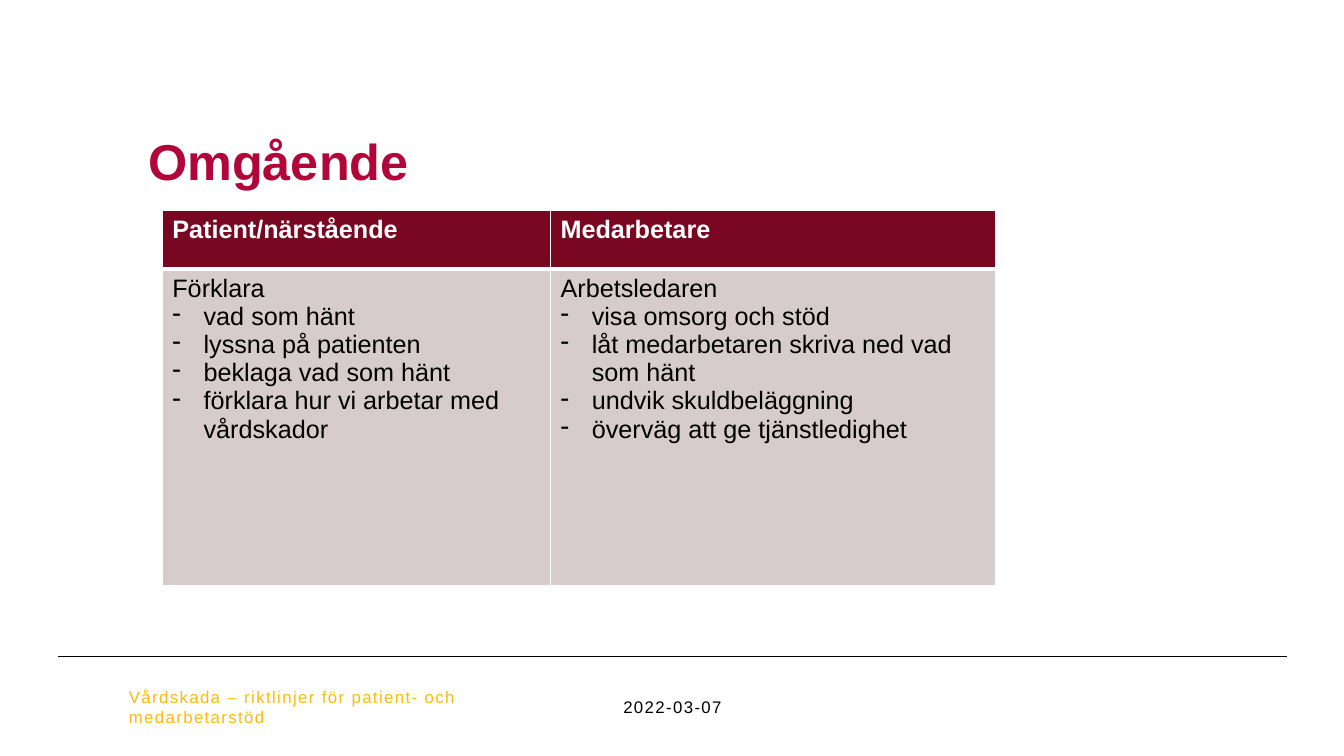
from pptx import Presentation
from pptx.dml.color import RGBColor
from pptx.enum.shapes import MSO_CONNECTOR
from pptx.enum.text import MSO_ANCHOR, PP_ALIGN
from pptx.oxml.ns import qn
from pptx.util import Inches, Pt
from lxml.etree import SubElement

COLORS = {"title": "B1063A", "header": "790721", "body": "D7CCCD",
          "white": "FFFFFF", "black": "000000", "footer": "FDB913"}

TITLE = "Omgående"
COLUMNS = [
    {"header": "Patient/närstående", "width": 3.85, "lead": "Förklara",
     "items": ["vad som hänt", "lyssna på patienten", "beklaga vad som hänt",
               "förklara hur vi arbetar med vårdskador"]},
    {"header": "Medarbetare", "width": 4.41, "lead": "Arbetsledaren",
     "items": ["visa omsorg och stöd", "låt medarbetaren skriva ned vad som hänt",
               "undvik skuldbeläggning", "överväg att ge tjänstledighet"]},
]
ROW_HEIGHTS = [0.58, 3.14]
FOOTERS = [  # text, left, width, alignment, colour
    ("2022-03-07", 5.31, 2.72, PP_ALIGN.CENTER, "black"),
    ("Vårdskada – riktlinjer för patient- och medarbetarstöd", 1.18, 3.94,
     PP_ALIGN.LEFT, "footer"),
]


def rgb(name):
    return RGBColor.from_string(COLORS[name])


def style(p, size, color, bold=False):
    for r in p.runs:
        r.font.name = "Arial"
        r.font.size = Pt(size)
        r.font.bold = bold
        r.font.color.rgb = rgb(color)


def add_dash(p):
    """Give the paragraph a hanging dash bullet."""
    pPr = p._p.get_or_add_pPr()
    pPr.set("marL", str(Inches(0.31)))
    pPr.set("indent", str(-Inches(0.31)))
    SubElement(pPr, qn("a:buChar"), char="-")


def format_cell(cell, fill, bottom=1, top=1):
    """Draw white borders (widths in points), then fill the cell."""
    tcPr = cell._tc.get_or_add_tcPr()
    for side, width in (("L", 1), ("R", 1), ("T", top), ("B", bottom)):
        ln = SubElement(tcPr, qn(f"a:ln{side}"), w=str(Pt(width)))
        solid = SubElement(ln, qn("a:solidFill"))
        SubElement(solid, qn("a:srgbClr"), val=COLORS["white"])
    cell.fill.solid()
    cell.fill.fore_color.rgb = rgb(fill)


def add_title(s):
    title = s.shapes.title
    title.left, title.top = Inches(1.37), Inches(1.23)
    title.width, title.height = Inches(10.6), Inches(0.71)
    tf = title.text_frame
    tf.text = TITLE
    tf.vertical_anchor = MSO_ANCHOR.BOTTOM
    tf.paragraphs[0].alignment = PP_ALIGN.LEFT
    style(tf.paragraphs[0], 36, "title", bold=True)


def add_advice_table(s):
    width = sum(col["width"] for col in COLUMNS)
    table = s.shapes.add_table(2, len(COLUMNS), Inches(1.61), Inches(2.09),
                               Inches(width), Inches(sum(ROW_HEIGHTS))).table
    for row, height in zip(table.rows, ROW_HEIGHTS):
        row.height = Inches(height)
    for i, col in enumerate(COLUMNS):
        table.columns[i].width = Inches(col["width"])
        header, body = table.cell(0, i), table.cell(1, i)
        header.text = col["header"]
        style(header.text_frame.paragraphs[0], 18, "white", bold=True)
        format_cell(header, "header", bottom=3)

        tf = body.text_frame
        tf.text = "\n".join([col["lead"], *col["items"]])
        for p in tf.paragraphs:
            style(p, 18, "black")
        for p in tf.paragraphs[1:]:
            add_dash(p)
        format_cell(body, "body", top=3)


def add_footer(s):
    line = s.shapes.add_connector(MSO_CONNECTOR.STRAIGHT, Inches(0.58), Inches(6.51),
                                  Inches(12.76), Inches(6.51))
    line.line.color.rgb = rgb("black")
    line.line.width = Pt(0.5)
    SubElement(line._element.spPr, qn("a:effectLst"))
    for text, left, width, align, color in FOOTERS:
        box = s.shapes.add_textbox(Inches(left), Inches(6.81), Inches(width), Inches(0.4))
        tf = box.text_frame
        tf.word_wrap = True
        tf.vertical_anchor = MSO_ANCHOR.MIDDLE
        tf.text = text
        p = tf.paragraphs[0]
        p.alignment = align
        style(p, 12, color)
        p.runs[0].font._element.set("spc", "100")


def main():
    prs = Presentation()
    prs.slide_width, prs.slide_height = Inches(13.33), Inches(7.5)
    s = prs.slides.add_slide(prs.slide_layouts[5])
    add_footer(s)
    add_title(s)
    add_advice_table(s)
    prs.save("out.pptx")


if __name__ == "__main__":
    main()
